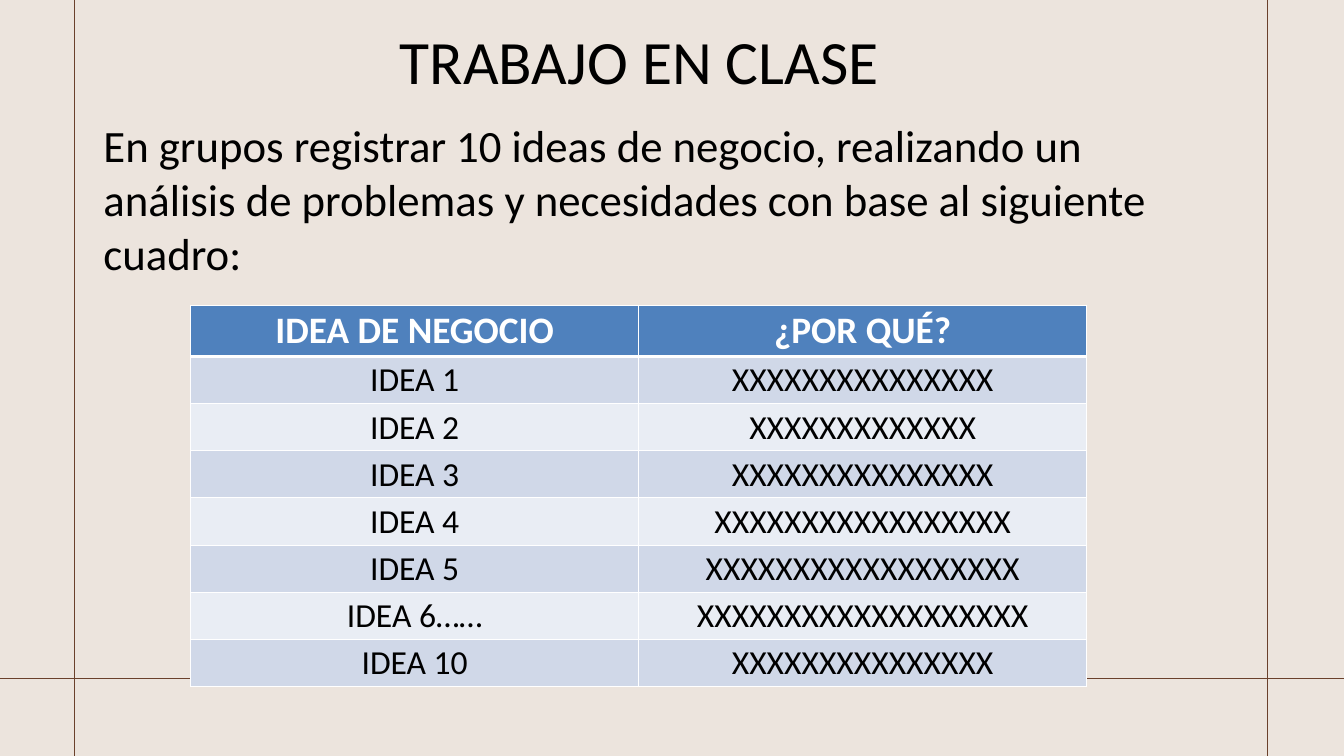
from lxml import etree
from pptx import Presentation
from pptx.dml.color import RGBColor
from pptx.enum.shapes import MSO_CONNECTOR
from pptx.enum.text import MSO_AUTO_SIZE, PP_ALIGN
from pptx.oxml.ns import qn
from pptx.util import Cm, Pt

STRAIGHT = MSO_CONNECTOR.STRAIGHT
CENTER, LEFT = PP_ALIGN.CENTER, PP_ALIGN.LEFT
GROW = MSO_AUTO_SIZE.SHAPE_TO_FIT_TEXT

# Content
TITLE = "TRABAJO EN CLASE"
TASK = ("En grupos registrar 10 ideas de negocio, realizando un análisis de "
        "problemas y necesidades con base al siguiente cuadro:")
IDEAS = [
    ("IDEA DE NEGOCIO", "¿POR QUÉ?"),
    ("IDEA 1", "XXXXXXXXXXXXXXX"),
    ("IDEA 2", "XXXXXXXXXXXXX"),
    ("IDEA 3", "XXXXXXXXXXXXXXX"),
    ("IDEA 4", "XXXXXXXXXXXXXXXXX"),
    ("IDEA 5", "XXXXXXXXXXXXXXXXXX"),
    ("IDEA 6……", "XXXXXXXXXXXXXXXXXXX"),
    ("IDEA 10", "XXXXXXXXXXXXXXX"),
]

# Format and layout, lengths in centimetres
COLORS = {"background": "ECE4DD", "rule": "6A402B", "text": "000000",
          "white": "FFFFFF", "header": "4F81BD", "odd": "D0D8E8", "even": "E9EDF4"}
FORMATS = {
    "title": {"size": Pt(66), "bold": False},
    "task": {"size": Pt(48), "bold": False},
    "header": {"size": Pt(40), "bold": True},
    "body": {"size": Pt(36), "bold": False},
}
WIDTH, HEIGHT = 50.8, 28.58
RULES = [
    (2.82, 0, 2.82, HEIGHT),
    (47.9, 0, 47.9, HEIGHT),
    (0, 25.65, WIDTH, 25.65),
]
TEXT_BOXES = [
    (TITLE, "title", CENTER, (3.66, 0.74, 41.02, 3.07)),
    (TASK, "task", LEFT, (3.66, 4.34, 41.02, 6.4)),
]
TABLE_LEFT, TABLE_TOP, COLUMN_WIDTH = 7.21, 11.53, 16.93
HEADER_HEIGHT, ROW_HEIGHT = 1.95, 1.78


def color(name):
    return RGBColor.from_string(COLORS[name])


def write(text_frame, text, style, text_color, alignment):
    paragraph = text_frame.paragraphs[0]
    paragraph.alignment = alignment
    run = paragraph.add_run()
    run.text = text
    run.font.name = "Calibri"
    run.font.color.rgb = color(text_color)
    for attribute, value in FORMATS[style].items():
        setattr(run.font, attribute, value)


def add_borders(cell, widths):
    properties = cell._tc.get_or_add_tcPr()
    for position, (side, points) in enumerate(widths.items()):
        border = etree.Element(qn(f"a:{side}"), w=str(Pt(points)))
        fill = etree.SubElement(border, qn("a:solidFill"))
        etree.SubElement(fill, qn("a:srgbClr"), val=COLORS["white"])
        properties.insert(position, border)


def add_rules(slide):
    for ends in RULES:
        rule = slide.shapes.add_connector(STRAIGHT, *map(Cm, ends))
        rule.line.color.rgb = color("rule")
        rule.line.width = Pt(1.5)
        etree.SubElement(rule._element.spPr, qn("a:effectLst"))


def add_texts(slide):
    for text, style, alignment, place in TEXT_BOXES:
        text_frame = slide.shapes.add_textbox(*map(Cm, place)).text_frame
        text_frame.word_wrap = True
        text_frame.auto_size = GROW
        write(text_frame, text, style, "text", alignment)


def add_ideas_table(slide):
    rows, columns = len(IDEAS), len(IDEAS[0])
    table_height = HEADER_HEIGHT + (rows - 1) * ROW_HEIGHT
    table = slide.shapes.add_table(
        rows, columns, Cm(TABLE_LEFT), Cm(TABLE_TOP),
        Cm(columns * COLUMN_WIDTH), Cm(table_height)).table
    for column in table.columns:
        column.width = Cm(COLUMN_WIDTH)
    for row_index, texts in enumerate(IDEAS):
        is_header = row_index == 0
        table.rows[row_index].height = Cm(HEADER_HEIGHT if is_header else ROW_HEIGHT)
        fill_name = "header" if is_header else "odd" if row_index % 2 else "even"
        for column_index, text in enumerate(texts):
            cell = table.cell(row_index, column_index)
            cell.fill.solid()
            cell.fill.fore_color.rgb = color(fill_name)
            write(cell.text_frame, text, "header" if is_header else "body",
                  "white" if is_header else "text", CENTER)
            # A thicker line parts the header from the ideas
            add_borders(cell, {"lnL": 1, "lnR": 1, "lnT": 3 if row_index == 1 else 1,
                               "lnB": 3 if is_header else 1})


def main():
    presentation = Presentation()
    presentation.slide_width, presentation.slide_height = Cm(WIDTH), Cm(HEIGHT)
    slide = presentation.slides.add_slide(presentation.slide_layouts[6])
    slide.background.fill.solid()
    slide.background.fill.fore_color.rgb = color("background")
    add_rules(slide)
    add_texts(slide)
    add_ideas_table(slide)
    presentation.save("out.pptx")


if __name__ == "__main__":
    main()
